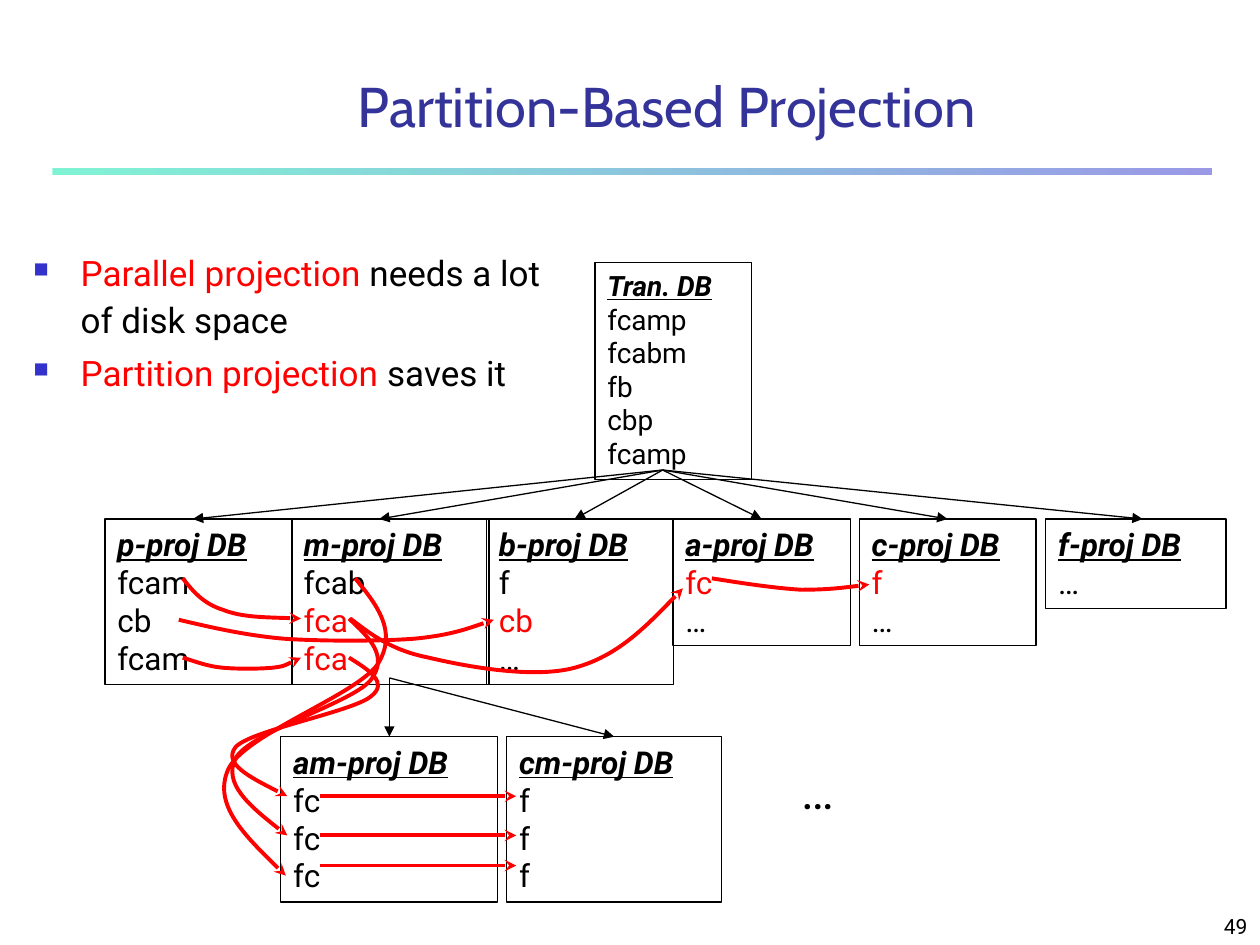
from pptx import Presentation
from pptx.dml.color import RGBColor
from pptx.enum import shapes, text
from pptx.oxml import ns, xmlchemy
from pptx.util import Pt

BLACK = RGBColor(0, 0, 0)
RED = RGBColor(0xFF, 0, 0)
NAVY = RGBColor(0x33, 0x33, 0x99)
BULLET = RGBColor(0x33, 0x33, 0xCC)
MINT = RGBColor(0x80, 0xF2, 0xD4)
LILAC = RGBColor(0x99, 0x99, 0xE6)

TITLE = "Partition-Based Projection"
BULLETS = [
    ("Parallel projection ", "needs a lot of disk space"),
    ("Partition projection ", "saves it"),
]
ROW_TOP, LOWER_TOP = 296.6, 421
# heading, rows (red ones start with "*"), left, top, width, height, text size
DATABASES = [
    ("Tran. DB", ["fcamp", "fcabm", "fb", "cbp", "fcamp"], 340, 150, 89.5, 124, 16),
    ("p-proj DB", ["fcam", "cb", "fcam"], 60, ROW_TOP, 107, 94.5, 18),
    ("m-proj DB", ["fcab", "*fca", "*fca"], 166.5, ROW_TOP, 113, 94.5, 18),
    ("b-proj DB", ["f", "*cb", "…"], 278, ROW_TOP, 107, 94.5, 18),
    ("a-proj DB", ["*fc", "…"], 384.5, ROW_TOP, 101.5, 72.5, 18),
    ("c-proj DB", ["*f", "…"], 491, ROW_TOP, 101, 72.5, 18),
    ("f-proj DB", ["…"], 597.6, ROW_TOP, 103, 51, 18),
    ("am-proj DB", ["fc", "fc", "fc"], 160.5, LOWER_TOP, 124, 94.5, 18),
    ("cm-proj DB", ["f", "f", "f"], 289.5, LOWER_TOP, 123, 94.5, 18),
]
# start point, then each target with the x of the arrow tip (None: middle of its top)
TREE = [
    ((378.7, 268.6), [("p-proj DB", 110.2), ("m-proj DB", 216.7), ("b-proj DB", 328.3),
                      ("a-proj DB", None), ("c-proj DB", None), ("f-proj DB", 653)]),
    ((222.5, 387.4), [("am-proj DB", None), ("cm-proj DB", None)]),
]
# start point, then three points for each Bezier segment
CURVES = [
    [(104.4, 330.5), (110.2, 337.7), (115.9, 344.9), (127.4, 348.5),
     (138.2, 352.8), (155.5, 352.8), (172, 353.5)],
    [(200.2, 353.5), (211.7, 362.2), (223.2, 371.5), (244.8, 375.8), (266.4, 380.9),
     (304.6, 388), (328.3, 381.6), (352.8, 375), (371.5, 355.7), (390.2, 336.2)],
    [(406.8, 330.5), (424.8, 333.4), (443.5, 336.2), (457.9, 337),
     (473, 337), (484.6, 335.5), (496.8, 334)],
    [(104.4, 375.8), (111.6, 378), (118.8, 380.9), (127.4, 381.6), (135.4, 382.3),
     (147.6, 382.3), (155.5, 381.6), (162.7, 380.9), (167, 378), (172, 375.8)],
    [(199.4, 375.8), (211, 383), (222.5, 390.2), (211.7, 398.2), (200.9, 406.8),
     (142.6, 417.6), (134.6, 427), (127.4, 436.3), (145.4, 445.7), (164.2, 455)],
    [(199.4, 353.5), (211, 364.3), (222.5, 375), (211.7, 388.8), (200.9, 401.8),
     (142.6, 418.3), (134.6, 433.4), (127.4, 447.8), (145.4, 463), (164.2, 477.4)],
    [(203, 330.5), (215.3, 345.6), (227.5, 360.7), (216, 379.4), (203.8, 397.4),
     (139, 419.8), (130.3, 440), (121.7, 460), (142.6, 480.2), (163.4, 500.4)],
    [(102.2, 354.2), (121, 358.6), (139.7, 363), (162, 365), (184.3, 366.5),
     (216.7, 366.5), (237, 365), (257, 363), (269.3, 358.6), (282.2, 354.2)],
]
FLOW_X = (183, 295)
FLOW_YS = [455, 477.4, 494.6]


def add_run(paragraph, words, size, color=BLACK, name="Roboto", **formats):
    run = paragraph.add_run()
    run.text = words
    run.font.color.rgb = color
    for key, value in dict(size=Pt(size), name=name, **formats).items():
        setattr(run.font, key, value)


def add_text_box(slide, *box):
    frame = slide.shapes.add_textbox(*map(Pt, box)).text_frame
    frame.word_wrap = True
    return frame


def add_child(parent, tag, **attributes):
    child = xmlchemy.OxmlElement(tag)
    for key, value in attributes.items():
        child.set(key, str(value))
    parent.append(child)
    return child


def style_arrow(shape, color, width, head):
    shape.line.color.rgb = color
    shape.line.width = Pt(width)
    line = shape._element.spPr.find(ns.qn("a:ln"))
    add_child(line, "a:tailEnd", type=head)
    add_child(shape._element.spPr, "a:effectLst")


def add_arrow(slide, start, end, color, width, head):
    arrow = slide.shapes.add_connector(
        shapes.MSO_CONNECTOR.STRAIGHT, *map(Pt, (*start, *end)))
    style_arrow(arrow, color, width, head)
    return arrow


def add_curve(slide, points):
    """Draw a freeform through the points, then turn each three lines into a Bezier."""
    start, *rest = [(Pt(x), Pt(y)) for x, y in points]
    builder = slide.shapes.build_freeform(*start)
    builder.add_line_segments(rest, close=False)
    curve = builder.convert_to_shape()
    curve.fill.background()
    lines = curve._element.xpath(".//a:lnTo")
    for first in range(0, len(lines), 3):
        bezier = add_child(lines[first].getparent(), "a:cubicBezTo")
        for line in lines[first:first + 3]:
            bezier.append(line[0])
            line.getparent().remove(line)
    style_arrow(curve, RED, 2.25, "stealth")


def add_database(slide, heading, rows, left, top, width, height, size):
    box = slide.shapes.add_shape(
        shapes.MSO_SHAPE.RECTANGLE, *map(Pt, (left, top, width, height)))
    box.shadow.inherit = False
    box.fill.background()
    box.line.color.rgb = BLACK
    box.line.width = Pt(0.75)
    frame = box.text_frame
    frame.word_wrap = True
    frame.vertical_anchor = text.MSO_ANCHOR.TOP
    paragraph = frame.paragraphs[0]
    paragraph.alignment = text.PP_ALIGN.LEFT
    add_run(paragraph, heading, size, bold=True, italic=True, underline=True)
    for row in rows:
        paragraph = frame.add_paragraph()
        paragraph.alignment = text.PP_ALIGN.LEFT
        add_run(paragraph, row.lstrip("*"), size, RED if row.startswith("*") else BLACK)
    return box


def add_title(slide):
    title = slide.shapes.title
    for key, value in dict(left=72, top=36, width=618.5, height=48).items():
        setattr(title, key, Pt(value))
    title.text_frame.vertical_anchor = text.MSO_ANCHOR.MIDDLE
    paragraph = title.text_frame.paragraphs[0]
    paragraph.alignment = text.PP_ALIGN.CENTER
    add_run(paragraph, TITLE, 32, NAVY, "Cabin")

    rule = slide.shapes.add_shape(
        shapes.MSO_SHAPE.RECTANGLE, *map(Pt, (30, 95.8, 662.4, 4)))
    rule.shadow.inherit = False
    rule.line.fill.background()
    rule.fill.gradient()
    rule.fill.gradient_angle = 0
    for stop, color in zip(rule.fill.gradient_stops, (MINT, LILAC)):
        stop.color.rgb = color


def add_bullets(slide):
    frame = add_text_box(slide, 12, 138, 324, 108)
    for index, (key_words, remainder) in enumerate(BULLETS):
        paragraph = frame.add_paragraph() if index else frame.paragraphs[0]
        paragraph.line_spacing = 1.1
        paragraph.space_before = Pt(4)
        properties = paragraph._p.get_or_add_pPr()
        properties.set("marL", str(Pt(27)))
        properties.set("indent", str(-Pt(27)))
        color = add_child(properties, "a:buClr")
        add_child(color, "a:srgbClr", val=BULLET)
        add_child(properties, "a:buSzPct", val=60000)
        add_child(properties, "a:buChar", char="■")
        add_run(paragraph, key_words, 20, RED)
        add_run(paragraph, remainder, 20)


def main():
    presentation = Presentation()
    presentation.slide_width, presentation.slide_height = Pt(720), Pt(540)
    slide = presentation.slides.add_slide(presentation.slide_layouts[5])
    add_title(slide)
    add_bullets(slide)

    boxes = {database[0]: add_database(slide, *database) for database in DATABASES}
    for start, targets in TREE:
        for name, tip in targets:
            end = (tip or start[0], boxes[name].top.pt)
            arrow = add_arrow(slide, start, end, BLACK, 0.75, "triangle")
            if tip is None:
                arrow.end_connect(boxes[name], 0)
    for points in CURVES:
        add_curve(slide, points)
    for y in FLOW_YS:
        add_arrow(slide, (FLOW_X[0], y), (FLOW_X[1], y), RED, 2.25, "stealth")

    add_run(add_text_box(slide, 450.7, 431.3, 37.5, 41).paragraphs[0], "…", 28)
    number = add_text_box(slide, 570, 510, 150, 30)
    number.vertical_anchor = text.MSO_ANCHOR.BOTTOM
    number.paragraphs[0].alignment = text.PP_ALIGN.RIGHT
    add_run(number.paragraphs[0], "49", 12)
    presentation.save("out.pptx")


if __name__ == "__main__":
    main()
